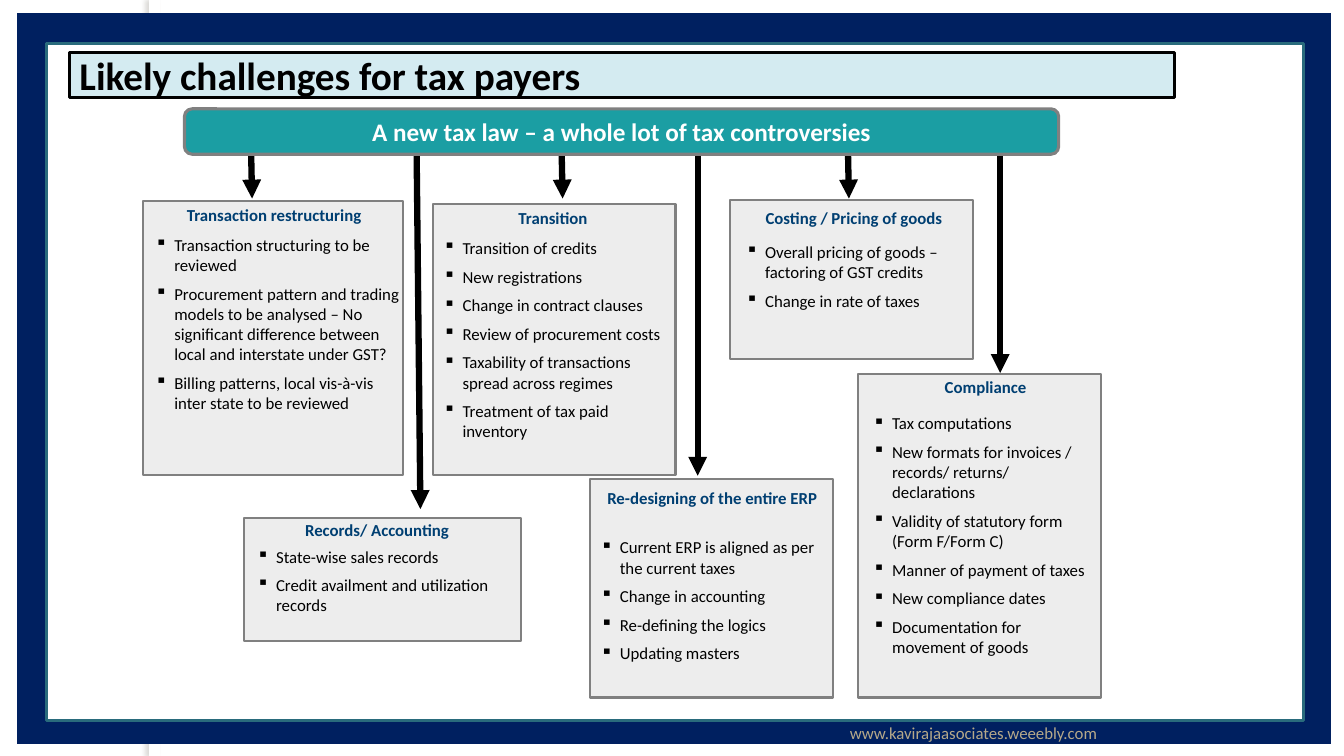
from lxml.etree import SubElement
from pptx import Presentation
from pptx.dml.color import RGBColor
from pptx.enum.shapes import MSO_CONNECTOR, MSO_SHAPE
from pptx.enum.text import MSO_ANCHOR, PP_ALIGN
from pptx.oxml.ns import qn
from pptx.util import Inches, Pt

BLACK = RGBColor(0x00, 0x00, 0x00)
WHITE = RGBColor(0xFF, 0xFF, 0xFF)
NAVY = RGBColor(0x00, 0x20, 0x60)
SLATE = RGBColor(0x29, 0x6B, 0x7C)
PALE_BLUE = RGBColor(0xD4, 0xEB, 0xF1)
TEAL = RGBColor(0x1B, 0x9E, 0xA3)
GREY = RGBColor(0x80, 0x80, 0x80)
LIGHT_GREY = RGBColor(0xED, 0xED, 0xED)
HEADING_BLUE = RGBColor(0x00, 0x3F, 0x72)
SAND = RGBColor(0xB6, 0xA9, 0x8A)

ARROWS = [
    (2.49, 1.47, 2.5, 1.97), (4.13, 1.3, 4.17, 5.05), (5.57, 1.47, 5.58, 1.97),
    (8.41, 1.47, 8.42, 1.97), (6.92, 1.44, 6.92, 4.72), (9.92, 1.52, 9.92, 3.7),
]

CARDS = [
    ("Transaction restructuring", (1.42, 1.99, 2.58, 2.72),
     (1.47, 2.05, 2.5, 0.18), (1.44, 2.28, 2.63, 1.92),
     ["Transaction structuring to be reviewed",
      "Procurement pattern and trading models to be analysed – No significant "
      "difference between local and interstate under GST?",
      "Billing patterns, local vis-à-vis inter state to be reviewed"]),
    ("Records/ Accounting", (2.42, 5.14, 2.75, 1.22),
     (2.45, 5.18, 2.58, 0.18), (2.45, 5.37, 2.66, 0.81),
     ["State-wise sales records", "Credit availment and utilization records"]),
    ("Transition", (4.29, 2.02, 2.41, 2.69),
     (4.61, 2.08, 1.75, 0.18), (4.3, 2.31, 2.4, 2.42),
     ["Transition of credits", "New registrations", "Change in contract clauses",
      "Review of procurement costs",
      "Taxability of transactions spread across regimes",
      "Treatment of tax paid inventory"]),
    ("Re-designing of the entire ERP", (5.85, 4.75, 2.41, 2.17),
     (5.98, 4.86, 2.17, 0.36), (5.86, 5.28, 2.33, 1.41),
     ["Current ERP is aligned as per the current taxes", "Change in accounting",
      "Re-defining the logics", "Updating masters"]),
    ("Costing / Pricing of goods", (7.24, 1.98, 2.41, 1.58),
     (7.34, 2.08, 2.26, 0.18), (7.3, 2.35, 2.33, 0.81),
     ["Overall pricing of goods – factoring of GST credits",
      "Change in rate of taxes"]),
    ("Compliance", (8.51, 3.71, 2.41, 3.21),
     (8.9, 3.76, 1.75, 0.18), (8.56, 4.05, 2.33, 2.63),
     ["Tax computations", "New formats for invoices / records/ returns/ declarations",
      "Validity of statutory form (Form F/Form C)", "Manner of payment of taxes",
      "New compliance dates", "Documentation for movement of goods"]),
]


class SlideBuilder:
    """Draws styled elements on one slide."""

    def __init__(self, page, font="Calibri", size=12):
        self.page = page
        self.font = font
        self.size = size

    def style(self, para, color, size=None, bold=False):
        para.font.name = self.font
        para.font.size = Pt(size or self.size)
        para.font.bold = bold
        para.font.color.rgb = color

    def panel(self, bounds, fill, line=None, width=1.5, kind=MSO_SHAPE.RECTANGLE):
        shape = self.page.shapes.add_shape(kind, *map(Inches, bounds))
        shape.shadow.inherit = False
        shape.fill.solid()
        shape.fill.fore_color.rgb = fill
        if line is None:
            shape.line.fill.background()
        else:
            shape.line.color.rgb = line
            shape.line.width = Pt(width)
        return shape

    def strip(self, bounds):
        effects = self.panel(bounds, WHITE).element.spPr.find(qn("a:effectLst"))
        shadow = SubElement(effects, qn("a:outerShdw"), blurRad=str(Pt(3)),
                            dist=str(Pt(3)), dir="10800000", rotWithShape="0")
        color = SubElement(shadow, qn("a:srgbClr"), val="736F63")
        SubElement(color, qn("a:alpha"), val="25000")

    def label(self, shape, text, color, size, align):
        frame = shape.text_frame
        frame.word_wrap = True
        frame.vertical_anchor = MSO_ANCHOR.MIDDLE
        para = frame.paragraphs[0]
        para.text = text
        para.alignment = align
        self.style(para, color, size, True)

    def text_frame(self, bounds):
        frame = self.page.shapes.add_textbox(*map(Inches, bounds)).text_frame
        frame.word_wrap = True
        return frame

    def heading(self, bounds, text):
        frame = self.text_frame(bounds)
        frame.margin_left = frame.margin_right = Inches(0)
        frame.margin_top = frame.margin_bottom = Inches(0)
        para = frame.paragraphs[0]
        para.text = text
        para.alignment = PP_ALIGN.CENTER
        para.line_spacing = 0.9
        self.style(para, HEADING_BLUE, bold=True)

    def bullets(self, bounds, items):
        frame = self.text_frame(bounds)
        for index, item in enumerate(items):
            para = frame.add_paragraph() if index else frame.paragraphs[0]
            para.text = item
            para.space_before = Pt(6 if index else 0)
            properties = para._p.get_or_add_pPr()
            properties.set("marL", str(Inches(0.19)))
            properties.set("indent", str(Inches(-0.19)))
            SubElement(properties, qn("a:buChar"), char="▪")
            self.style(para, BLACK)

    def card(self, title, bounds, heading_bounds, body_bounds, items):
        self.panel(bounds, LIGHT_GREY, GREY)
        self.heading(heading_bounds, title)
        self.bullets(body_bounds, items)

    def arrow(self, ends):
        arrow = self.page.shapes.add_connector(MSO_CONNECTOR.STRAIGHT, *map(Inches, ends))
        arrow.line.color.rgb = BLACK
        arrow.line.width = Pt(4.5)
        SubElement(arrow.line._get_or_add_ln(), qn("a:tailEnd"), type="triangle")
        SubElement(arrow.element.spPr, qn("a:effectLst"))

    def footer(self, bounds, text):
        frame = self.text_frame(bounds)
        frame.vertical_anchor = MSO_ANCHOR.BOTTOM
        para = frame.paragraphs[0]
        para.text = text
        self.style(para, SAND)


def main():
    deck = Presentation()
    deck.slide_width, deck.slide_height = Inches(13.33), Inches(7.5)
    builder = SlideBuilder(deck.slides.add_slide(deck.slide_layouts[6]))

    builder.strip((1.48, 0, 0.11, 7.5))
    builder.panel((0.17, 0.13, 13.03, 7.25), NAVY)
    builder.panel((0.46, 0.43, 12.47, 6.72), WHITE, SLATE, 2)
    title = builder.panel((0.69, 0.52, 10.96, 0.45), PALE_BLUE, BLACK, 2)
    builder.label(title, "Likely challenges for tax payers", BLACK, 28, PP_ALIGN.LEFT)
    for ends in ARROWS:
        builder.arrow(ends)
    banner = builder.panel((1.83, 1.08, 8.67, 0.45), TEAL, GREY, 2.25,
                           MSO_SHAPE.ROUNDED_RECTANGLE)
    builder.label(banner, "A new tax law – a whole lot of tax controversies",
                  WHITE, 18, PP_ALIGN.CENTER)
    for card in CARDS:
        builder.card(*card)
    builder.footer((8.33, 6.9, 4.22, 0.52), "www.kavirajaasociates.weeebly.com")
    deck.save("out.pptx")


if __name__ == "__main__":
    main()
